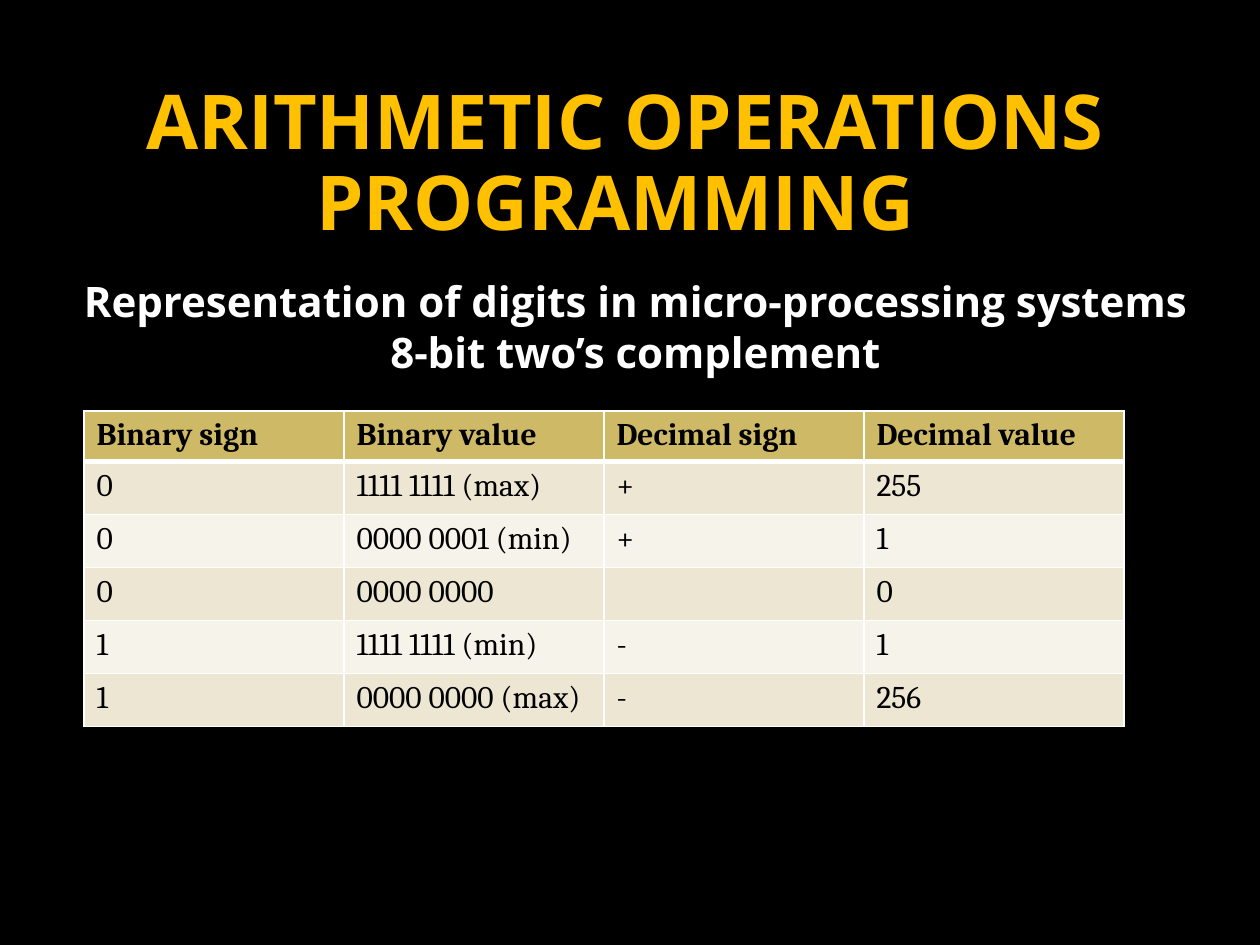
from dataclasses import dataclass

from lxml.etree import SubElement
from pptx import Presentation
from pptx.dml.color import RGBColor as Rgb
from pptx.enum.text import MSO_ANCHOR as Anchor, PP_ALIGN as Align
from pptx.oxml.ns import qn
from pptx.util import Emu, Pt

PX = 914400 // 126


@dataclass(frozen=True)
class Theme:
    background: str = "000000"
    title: str = "FFC000"
    subtitle: str = "FFFFFF"
    cell_text: str = "000000"
    header: str = "CEB966"
    bands: tuple = ("EDE6D3", "F6F3EA")
    rule: str = "FFFFFF"
    heading_font: str = "Open Sans"
    table_font: str = "Cambria"
    title_size: float = 43.2
    subtitle_size: float = 24
    table_size: float = 18
    thin: float = 1
    thick: float = 3


THEME = Theme()

TITLE = "ARITHMETIC OPERATIONS PROGRAMMING "
SUBTITLE = [
    "Representation of digits in micro-processing systems",
    "8-bit two’s complement",
]
ROWS = [
    ("Binary sign", "Binary value", "Decimal sign", "Decimal value"),
    ("0", "1111 1111 (max)", "+", "255"),
    ("0", "0000 0001 (min)", "+", "1"),
    ("0", "0000 0000", "", "0"),
    ("1", "1111 1111 (min)", "-", "1"),
    ("1", "0000 0000 (max)", "-", "256"),
]


def px(*lengths):
    return [Emu(length * PX) for length in lengths]


def style(paragraph, font_name, size, color, bold):
    font = paragraph.font
    font.name, font.size, font.bold = font_name, Pt(size), bold
    font.color.rgb = Rgb.from_string(color)


def add_heading(slide, box, lines, size, color, anchor, inset, spacing=1.0):
    """Add centred bold lines; inset is (side, top, bottom) in px."""
    frame = slide.shapes.add_textbox(*px(*box)).text_frame
    frame.word_wrap = True
    frame.vertical_anchor = anchor
    side, frame.margin_top, frame.margin_bottom = px(*inset)
    frame.margin_left = frame.margin_right = side
    frame.text = "\n".join(lines)
    for paragraph in frame.paragraphs:
        paragraph.alignment = Align.CENTER
        paragraph.line_spacing = spacing
        style(paragraph, THEME.heading_font, size, color, True)


def set_borders(cell, top, bottom):
    properties = cell._tc.get_or_add_tcPr()
    widths = {"lnL": THEME.thin, "lnR": THEME.thin, "lnT": top, "lnB": bottom}
    for side, width in widths.items():
        line = SubElement(properties, qn(f"a:{side}"), w=str(Pt(width)))
        fill = SubElement(line, qn("a:solidFill"))
        SubElement(fill, qn("a:srgbClr"), val=THEME.rule)


def add_value_table(slide, left, top, column_width, header_height, row_height):
    columns = len(ROWS[0])
    width = column_width * columns
    height = header_height + row_height * (len(ROWS) - 1)
    table = slide.shapes.add_table(
        len(ROWS), columns, *px(left, top, width, height)).table
    for column in table.columns:
        column.width = Emu(column_width * PX)

    for r, values in enumerate(ROWS):
        is_header = r == 0
        table.rows[r].height = Emu((header_height if is_header else row_height) * PX)
        band = THEME.header if is_header else THEME.bands[(r - 1) % 2]
        for c, value in enumerate(values):
            cell = table.cell(r, c)
            cell.text = value
            style(cell.text_frame.paragraphs[0], THEME.table_font,
                  THEME.table_size, THEME.cell_text, is_header)
            # The heavy rule separates the header from the values
            set_borders(cell,
                        top=THEME.thick if r == 1 else THEME.thin,
                        bottom=THEME.thick if is_header else THEME.thin)
            cell.fill.solid()
            cell.fill.fore_color.rgb = Rgb.from_string(band)


def main():
    deck = Presentation()
    deck.slide_width, deck.slide_height = px(1260, 945)
    slide = deck.slides.add_slide(deck.slide_layouts[6])
    slide.background.fill.solid()
    slide.background.fill.fore_color.rgb = Rgb.from_string(THEME.background)

    # Title and subtitle
    add_heading(slide, (58, 37, 1134, 210), [TITLE], THEME.title_size,
                THEME.title, Anchor.BOTTOM, inset=(6, 0, 0), spacing=0.9)
    add_heading(slide, (21, 273, 1229, 126), SUBTITLE, THEME.subtitle_size,
                THEME.subtitle, Anchor.TOP, inset=(12, 3, 6))

    # Signs and values in two's complement
    add_value_table(slide, left=84, top=411, column_width=260,
                    header_height=49, row_height=53)

    deck.save("out.pptx")


if __name__ == "__main__":
    main()
